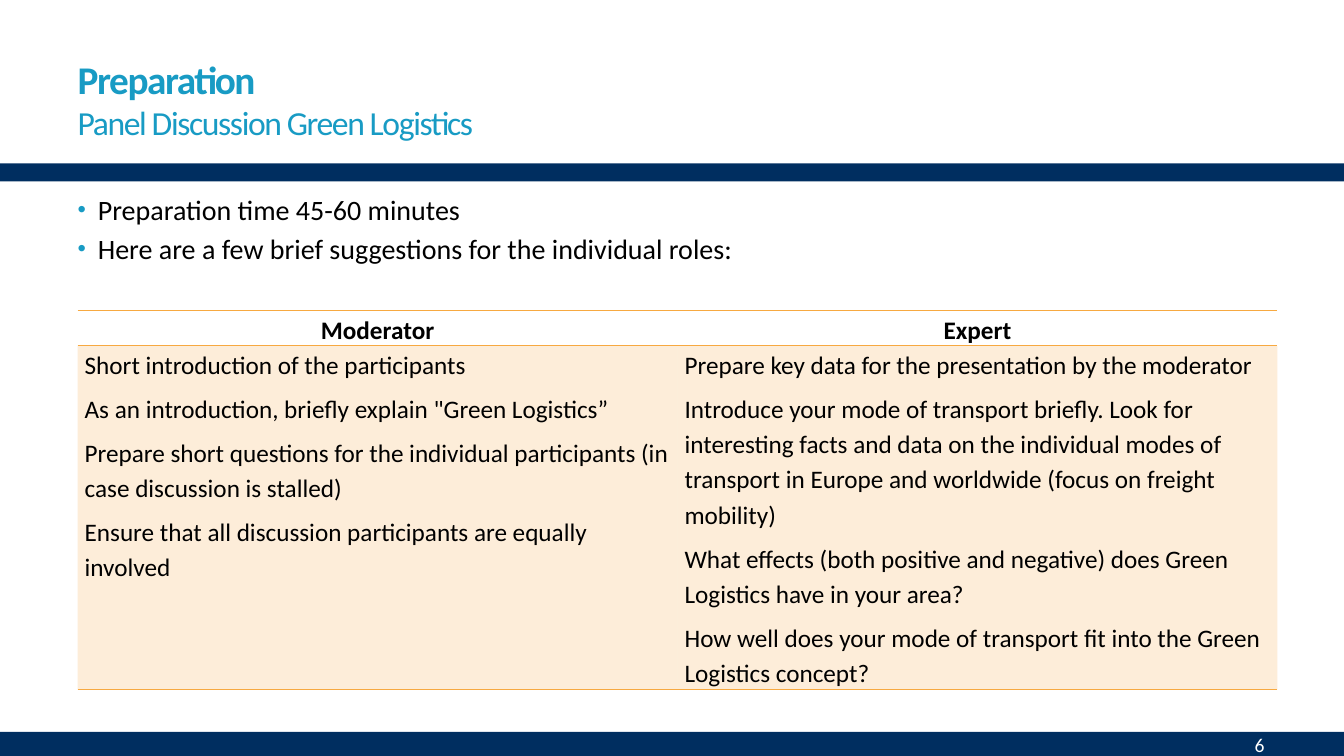
from dataclasses import dataclass

import lxml.etree
import pptx
import pptx.dml.color
import pptx.enum.shapes
import pptx.enum.text
import pptx.oxml.ns
import pptx.util

Inches = pptx.util.Inches
Pt = pptx.util.Pt
RGB = pptx.dml.color.RGBColor
Align = pptx.enum.text.PP_ALIGN
Anchor = pptx.enum.text.MSO_ANCHOR
qn = pptx.oxml.ns.qn


@dataclass(frozen=True)
class Theme:
    font: str = "Calibri"
    navy: str = "002E60"
    blue: str = "189BC4"
    orange: str = "F7A941"
    white: str = "FFFFFF"
    black: str = "000000"
    title_size: int = 28
    subtitle_size: int = 24
    body_size: int = 20
    table_size: int = 18
    page_size: int = 14


@dataclass(frozen=True)
class Box:
    left: float
    top: float
    width: float
    height: float

    def lengths(self) -> tuple:
        return tuple(Inches(v) for v in (self.left, self.top, self.width, self.height))


@dataclass(frozen=True)
class Bar:
    box: Box
    color: str


@dataclass(frozen=True)
class Role:
    name: str
    tasks: tuple[str, ...]


THEME = Theme()
BARS = (
    Bar(Box(-0.06, 7.26, 13.54, 0.5), THEME.navy),
    Bar(Box(0, 0.24, 13.33, 0.25), THEME.white),
    Bar(Box(0, 1.62, 13.49, 0.18), THEME.navy),
)
POINTS = (
    "Preparation time 45-60 minutes",
    "Here are a few brief suggestions for the individual roles:",
)
ROLES = (
    Role("Moderator", (
        "Short introduction of the participants",
        "As an introduction, briefly explain \"Green Logistics”",
        "Prepare short questions for the individual participants (in case discussion is stalled)",
        "Ensure that all discussion participants are equally involved",
    )),
    Role("Expert", (
        "Prepare key data for the presentation by the moderator",
        "Introduce your mode of transport briefly. Look for interesting facts and data on the "
        "individual modes of transport in Europe and worldwide (focus on freight mobility)",
        "What effects (both positive and negative) does Green Logistics have in your area?",
        "How well does your mode of transport fit into the Green Logistics concept?",
    )),
)


def style(font, size: int, color: str, bold: bool = False) -> None:
    font.name = THEME.font
    font.size = Pt(size)
    font.bold = bold
    font.color.rgb = RGB.from_string(color)


def place(shape, box: Box) -> None:
    shape.left, shape.top, shape.width, shape.height = box.lengths()


def add_bar(slide, bar: Bar) -> None:
    shape = slide.shapes.add_shape(pptx.enum.shapes.MSO_SHAPE.RECTANGLE, *bar.box.lengths())
    shape.shadow.inherit = False
    shape.fill.solid()
    shape.fill.fore_color.rgb = RGB.from_string(bar.color)
    shape.line.fill.background()


def fill_title(title) -> None:
    place(title, Box(0.67, 0.44, 6.94, 1.08))
    frame = title.text_frame
    frame.auto_size = pptx.enum.text.MSO_AUTO_SIZE.NONE
    frame.vertical_anchor = Anchor.MIDDLE
    heading = frame.paragraphs[0]
    heading.alignment = Align.LEFT
    topic = heading.add_run()
    topic.text = "Preparation"
    style(topic.font, THEME.title_size, THEME.blue, True)
    heading.add_line_break()
    subtitle = heading.add_run()
    subtitle.text = "Panel Discussion Green Logistics"
    style(subtitle.font, THEME.subtitle_size, THEME.blue)
    for run in heading.runs:
        run.font._element.set("spc", "-100")


def add_bullet(paragraph) -> None:
    props = paragraph._p.get_or_add_pPr()
    props.set("marL", str(Inches(0.2)))
    props.set("indent", str(Inches(-0.2)))
    color = lxml.etree.SubElement(props, qn("a:buClr"))
    lxml.etree.SubElement(color, qn("a:srgbClr"), val=THEME.blue)
    lxml.etree.SubElement(props, qn("a:buSzPct"), val="85000")
    lxml.etree.SubElement(props, qn("a:buFont"), typeface="Arial")
    lxml.etree.SubElement(props, qn("a:buChar"), char="•")


def fill_body(body) -> None:
    place(body, Box(0.67, 1.86, 12, 5.22))
    frame = body.text_frame
    frame.auto_size = pptx.enum.text.MSO_AUTO_SIZE.NONE
    frame.text = "\n".join(POINTS)
    for index, point in enumerate(frame.paragraphs):
        point.space_before = Pt(4 if index else 0)
        add_bullet(point)
        style(point.font, THEME.body_size, THEME.black)


def add_border(cell, edge: str) -> None:
    line = lxml.etree.SubElement(cell._tc.get_or_add_tcPr(), qn(f"a:{edge}"), w=str(Pt(1)))
    fill = lxml.etree.SubElement(line, qn("a:solidFill"))
    lxml.etree.SubElement(fill, qn("a:srgbClr"), val=THEME.orange)


def write_cell(cell, lines: tuple[str, ...], header: bool) -> None:
    cell.margin_left = cell.margin_right = Inches(0.07)
    cell.margin_top = cell.margin_bottom = 0
    cell.text = "\n".join(lines)
    gap = Pt(6 if header else 3)
    for index, paragraph in enumerate(cell.text_frame.paragraphs):
        paragraph.alignment = Align.CENTER if header else Align.LEFT
        paragraph.line_spacing = 1.15
        paragraph.space_before = gap if index else 0
        paragraph.space_after = gap
        style(paragraph.font, THEME.table_size, THEME.black, header)
    for edge in ("lnT", "lnB"):
        add_border(cell, edge)
    if header:
        cell.fill.background()
        return
    cell.fill.solid()
    cell.fill.fore_color.rgb = RGB.from_string(THEME.orange)
    tint = cell._tc.tcPr.find(qn("a:solidFill")).find(qn("a:srgbClr"))
    lxml.etree.SubElement(tint, qn("a:alpha"), val="20000")


def add_roles(slide) -> None:
    box = Box(0.77, 3.08, 11.9, 3.7)
    table = slide.shapes.add_table(2, len(ROLES), *box.lengths()).table
    table.first_row = table.horz_banding = False
    no_grid = "{2D5ABB26-0587-4C30-8999-92F81FD0307C}"
    table._tbl.tblPr.find(qn("a:tableStyleId")).text = no_grid
    for row, height in zip(table.rows, (0.35, 3.35)):
        row.height = Inches(height)
    for column, role in enumerate(ROLES):
        write_cell(table.cell(0, column), (role.name,), True)
        write_cell(table.cell(1, column), role.tasks, False)


def add_page_number(slide) -> None:
    frame = slide.shapes.add_textbox(*Box(11.08, 7.21, 1.56, 0.36).lengths()).text_frame
    frame.word_wrap = True
    frame.vertical_anchor = Anchor.MIDDLE
    frame.text = "6"
    number = frame.paragraphs[0]
    number.alignment = Align.RIGHT
    style(number.font, THEME.page_size, THEME.white)


def main() -> None:
    deck = pptx.Presentation()
    deck.slide_width, deck.slide_height = Inches(13.33), Inches(7.5)
    slide = deck.slides.add_slide(deck.slide_layouts[1])
    for bar in BARS:
        add_bar(slide, bar)
    fill_title(slide.shapes.title)
    fill_body(slide.placeholders[1])
    add_roles(slide)
    add_page_number(slide)
    deck.save("out.pptx")


if __name__ == "__main__":
    main()
